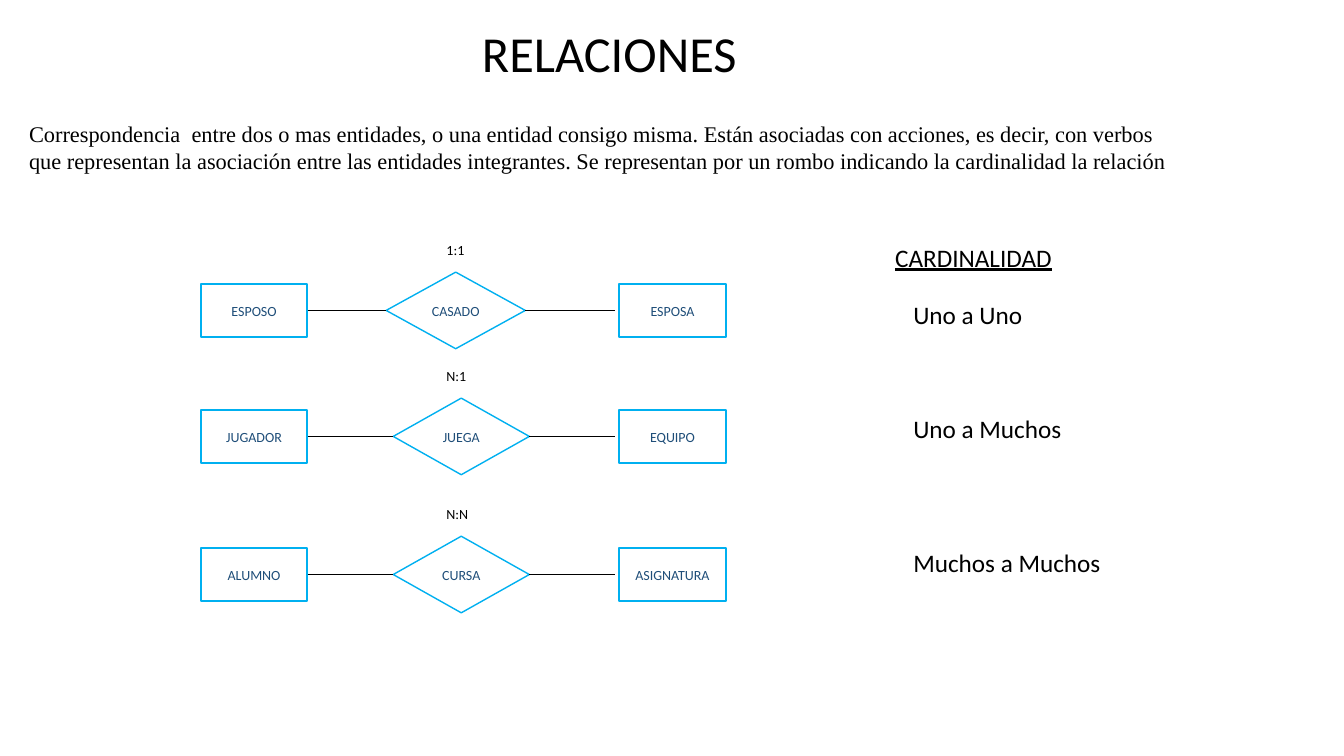
import pptx
import pptx.util
import pptx.dml.color
import pptx.enum.shapes
import pptx.enum.text
import pptx.oxml.ns
import lxml.etree

TITLE = "RELACIONES"
DEFINITION = (
    "Correspondencia  entre dos o mas entidades, o una entidad consigo misma. "
    "Están asociadas con acciones, es decir, con verbos que representan la "
    "asociación entre las entidades integrantes. Se representan por un rombo "
    "indicando la cardinalidad la relación"
)
HEADING = "CARDINALIDAD"
# Left entity, verb, right entity, ratio, axis height, diamond left and width
RELATIONS = [
    ("ESPOSO", "CASADO", "ESPOSA", "1:1", 3.08, 3.83, 1.38),
    ("JUGADOR", "JUEGA", "EQUIPO", "N:1", 4.33, 3.9, 1.35),
    ("ALUMNO", "CURSA", "ASIGNATURA", "N:N", 5.7, 3.9, 1.35),
]
CARDINALITIES = [("Uno a Uno", 2.92), ("Uno a Muchos", 4.05), ("Muchos a Muchos", 5.38)]

BLACK, CYAN, NAVY = "000000", "00B0F0", "1F4E79"
ENTITY_LEFT, ENTITY_RIGHT = 1.99, 6.14
ENTITY_WIDTH, ENTITY_HEIGHT, DIAMOND_HEIGHT = 1.06, 0.53, 0.76
LINE_END = 6.1

SHAPE = pptx.enum.shapes.MSO_SHAPE
ALIGN = pptx.enum.text.PP_ALIGN
ANCHOR = pptx.enum.text.MSO_ANCHOR
inches = pptx.util.Inches


def colour(code):
    return pptx.dml.color.RGBColor.from_string(code)


def write(shape, text, size, code=BLACK, font="Calibri", align=ALIGN.LEFT,
          anchor=ANCHOR.TOP, wrap=True, underline=None):
    frame = shape.text_frame
    frame.word_wrap = wrap
    frame.vertical_anchor = anchor
    para = frame.paragraphs[0]
    para.alignment = align
    span = para.add_run()
    span.text = text
    span.font.size = pptx.util.Pt(size)
    span.font.name = font
    span.font.color.rgb = colour(code)
    span.font.underline = underline


def add_text(left, top, width, height, text, size, **style):
    box = page.shapes.add_textbox(*map(inches, (left, top, width, height)))
    write(box, text, size, **style)


def add_node(kind, left, axis, width, height, text, weight):
    node = page.shapes.add_shape(
        kind, *map(inches, (left, axis - height / 2, width, height)))
    node.shadow.inherit = False
    node.fill.background()
    node.line.color.rgb = colour(CYAN)
    node.line.width = pptx.util.Pt(weight)
    write(node, text, 10, NAVY, align=ALIGN.CENTER, anchor=ANCHOR.MIDDLE, wrap=False)


def add_link(start, end, axis):
    link = page.shapes.add_connector(
        pptx.enum.shapes.MSO_CONNECTOR.STRAIGHT,
        *map(inches, (start, axis, end, axis)))
    link.line.color.rgb = colour(BLACK)
    link.line.width = pptx.util.Pt(0.5)
    lxml.etree.SubElement(link._element.spPr, pptx.oxml.ns.qn("a:effectLst"))


deck = pptx.Presentation()
deck.slide_width, deck.slide_height = inches(13.33), inches(7.5)
page = deck.slides.add_slide(deck.slide_layouts[5])

# Title and definition
title = page.shapes.title
title.left, title.top, title.width, title.height = map(inches, (4.68, 0.17, 3.06, 0.71))
write(title, TITLE, 36)
add_text(0.19, 1.14, 11.67, 1.18, DEFINITION, 16, font="Times New Roman")

# Relations: entity, diamond, entity on one axis
for first, verb, second, ratio, axis, left, width in RELATIONS:
    for entity, place in ((first, ENTITY_LEFT), (second, ENTITY_RIGHT)):
        add_node(SHAPE.RECTANGLE, place, axis, ENTITY_WIDTH, ENTITY_HEIGHT, entity, 1.5)
    add_node(SHAPE.DIAMOND, left, axis, width, DIAMOND_HEIGHT, verb, 1)
    add_link(ENTITY_LEFT + ENTITY_WIDTH, left, axis)
    add_link(left + width, LINE_END, axis)
    add_text(4.33, axis - 0.73, 0.85, 0.27, ratio, 10)

# Cardinality list
add_text(8.78, 2.35, 2.03, 0.4, HEADING, 18, underline=True)
for name, top in CARDINALITIES:
    add_text(8.96, top, 2.28, 0.4, name, 18)

deck.save("out.pptx")
